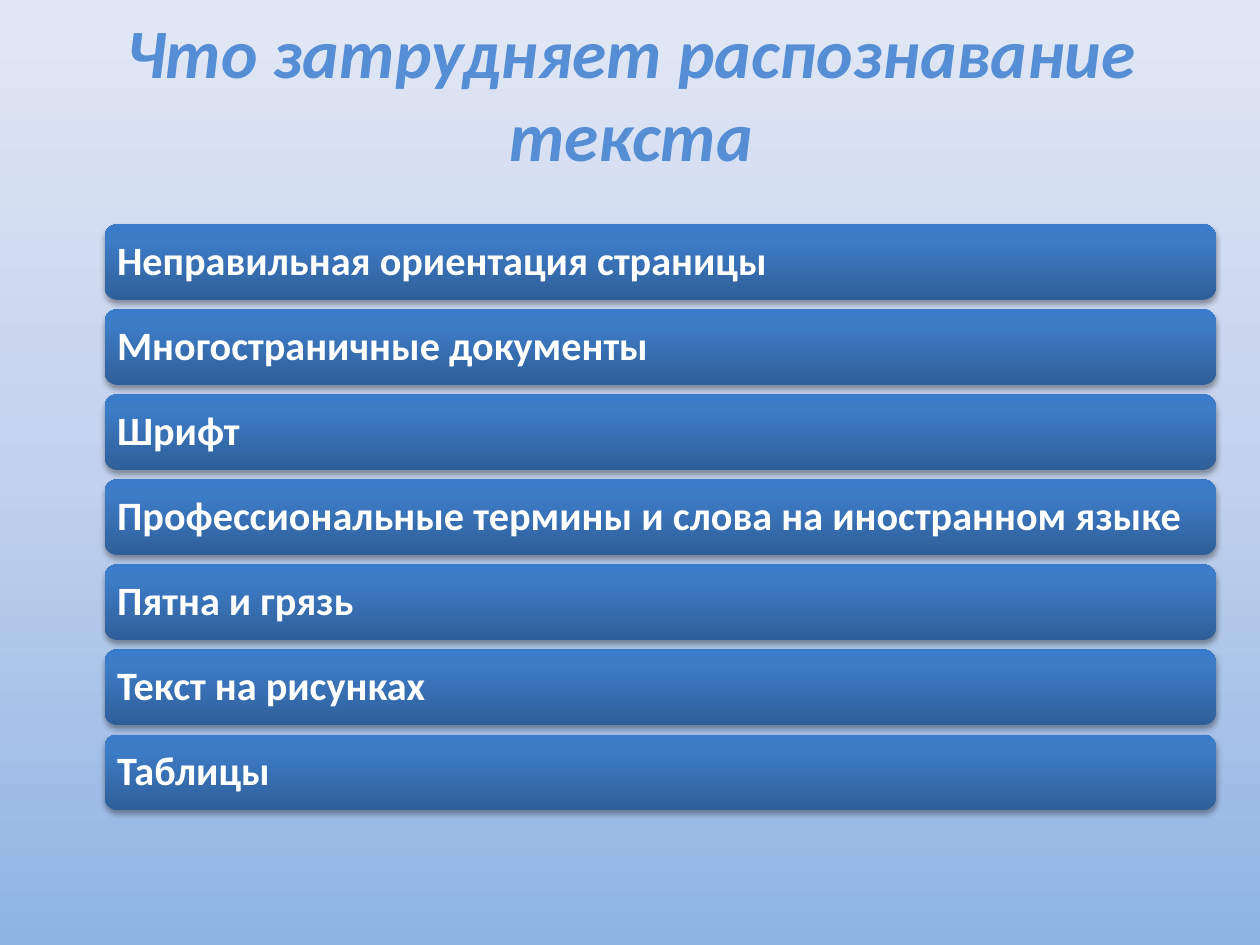
from dataclasses import dataclass

from lxml.etree import SubElement
from pptx import Presentation
from pptx.dml.color import RGBColor
from pptx.enum.shapes import MSO_SHAPE
from pptx.enum.text import MSO_ANCHOR, PP_ALIGN
from pptx.oxml.ns import qn
from pptx.util import Inches, Pt


@dataclass(frozen=True)
class Theme:
    font: str = "Calibri"
    title_size: float = 39.6
    bar_size: float = 23
    title_color: str = "558ED5"
    bar_text: str = "FFFFFF"
    shadow: str = "000000"
    # Gradient stops run from the bottom edge to the top: (percent, colour)
    backdrop: tuple = ((0, "8EB4E3"), (50, "C2D1ED"), (100, "E1E8F5"))
    bar: tuple = ((0, "2F5F99"), (80, "3D7CC7"), (100, "3A7CCB"))


THEME = Theme()
TITLE = "Что затрудняет распознавание текста"
OBSTACLES = (
    "Неправильная ориентация страницы",
    "Многостраничные документы",
    "Шрифт",
    "Профессиональные термины и слова на иностранном языке",
    "Пятна и грязь",
    "Текст на рисунках",
    "Таблицы",
)


def add_color(parent, color):
    return SubElement(parent, qn("a:srgbClr"), val=color)


def paint_upward(fill, element, stops):
    """Give the fill a vertical gradient with any number of stops."""
    fill.gradient()
    fill.gradient_angle = 90
    stop_list = element.find(".//" + qn("a:gsLst"))
    for old_stop in list(stop_list):
        stop_list.remove(old_stop)
    for percent, color in stops:
        add_color(SubElement(stop_list, qn("a:gs"), pos=str(percent * 1000)), color)


def add_soft_shadow(bar):
    bar.shadow.inherit = False
    effects = bar.element.spPr.find(qn("a:effectLst"))
    shadow = SubElement(effects, qn("a:outerShdw"), blurRad=str(Pt(3.1)),
                        dist=str(Pt(1.8)), dir="5400000", rotWithShape="0")
    SubElement(add_color(shadow, THEME.shadow), qn("a:alpha"), val="35000")


def write(frame, words, size, color, align, italic=False):
    frame.word_wrap = True
    frame.vertical_anchor = MSO_ANCHOR.MIDDLE
    frame.text = words
    paragraph = frame.paragraphs[0]
    paragraph.alignment = align
    font = paragraph.runs[0].font
    font.name, font.size = THEME.font, Pt(size)
    font.bold, font.italic = True, italic
    font.color.rgb = RGBColor.from_string(color)
    return paragraph


def add_heading(slide, left, top, width, height):
    heading = slide.shapes.add_textbox(left, top, width, height)
    # The bottom inset lifts the two lines toward the slide's top edge
    heading.text_frame.margin_bottom = Inches(0.72)
    write(heading.text_frame, TITLE, THEME.title_size, THEME.title_color,
          PP_ALIGN.CENTER, italic=True)


def add_obstacle_list(slide, left, top, width, height):
    gap_share = 0.125  # gap between bars, as a share of a bar's height
    count = len(OBSTACLES)
    bar_height = height / (count + gap_share * (count - 1))
    pitch = bar_height * (1 + gap_share)
    for row, obstacle in enumerate(OBSTACLES):
        bar = slide.shapes.add_shape(
            MSO_SHAPE.ROUNDED_RECTANGLE,
            left, int(top + row * pitch), width, int(bar_height))
        paint_upward(bar.fill, bar.element, THEME.bar)
        bar.line.fill.background()
        add_soft_shadow(bar)
        bar.text_frame.margin_left = bar.text_frame.margin_right = Inches(0.07)
        paragraph = write(bar.text_frame, obstacle, THEME.bar_size,
                          THEME.bar_text, PP_ALIGN.LEFT)
        paragraph.line_spacing = 0.9


def main():
    deck = Presentation()
    deck.slide_width, deck.slide_height = Inches(10), Inches(7.5)
    slide = deck.slides.add_slide(deck.slide_layouts[6])

    # Backdrop
    paint_upward(slide.background.fill, slide.element, THEME.backdrop)

    # Heading above the list of obstacles
    add_heading(slide, Inches(0.51), Inches(0.44), Inches(9), Inches(1.25))
    add_obstacle_list(slide, Inches(0.83), Inches(1.78), Inches(8.82), Inches(4.65))

    deck.save("out.pptx")


if __name__ == "__main__":
    main()
